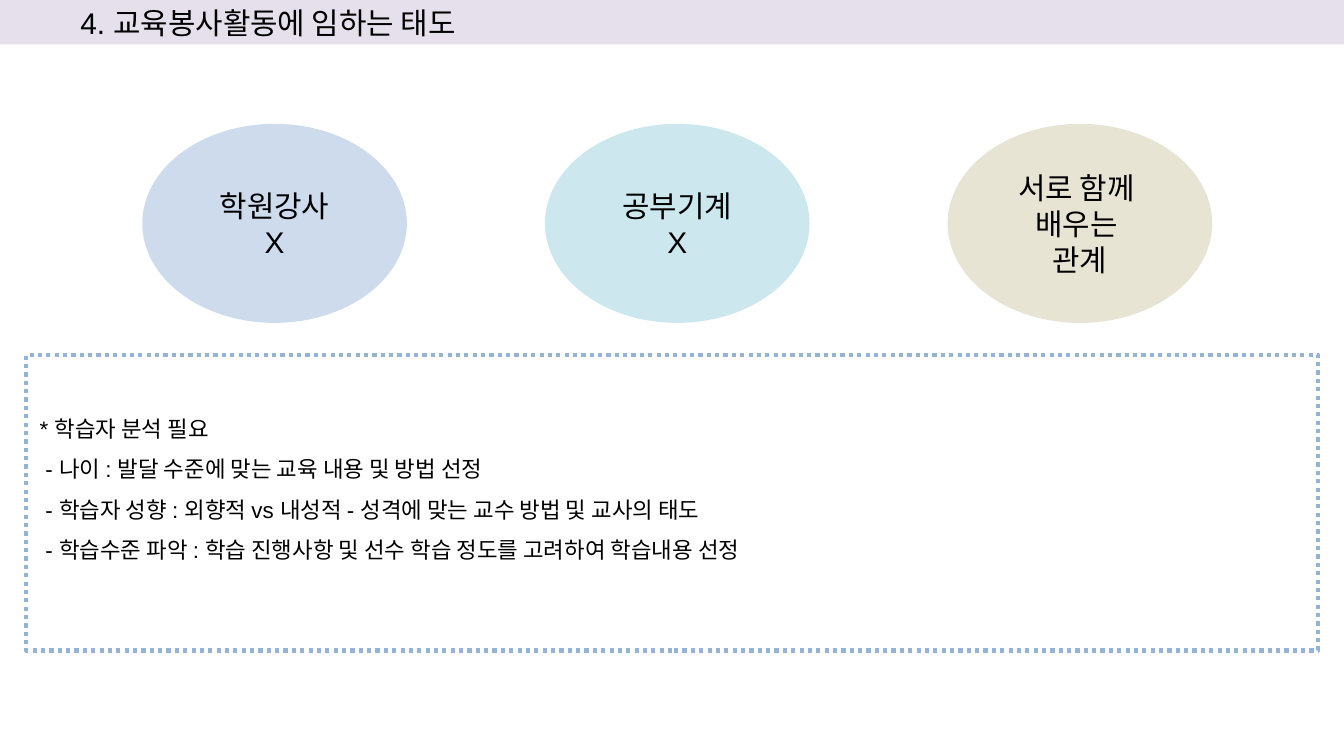
from dataclasses import dataclass

from lxml import etree
from pptx import Presentation
from pptx.dml.color import RGBColor
from pptx.enum.dml import MSO_LINE
from pptx.enum.shapes import MSO_SHAPE
from pptx.enum.text import MSO_ANCHOR, PP_ALIGN
from pptx.oxml.ns import qn
from pptx.util import Cm, Pt

RECTANGLE, OVAL = MSO_SHAPE.RECTANGLE, MSO_SHAPE.OVAL
TOP, MIDDLE = MSO_ANCHOR.TOP, MSO_ANCHOR.MIDDLE
LEFT, CENTER, JUSTIFY = PP_ALIGN.LEFT, PP_ALIGN.CENTER, PP_ALIGN.JUSTIFY
DOTTED = MSO_LINE.ROUND_DOT
FONT = "Arial"
BLACK = "000000"
OVAL_LEFT, OVAL_STEP = 2.69, 7.61


@dataclass(frozen=True)
class Line:
    """A paragraph of text with its left indent in centimetres."""

    text: str
    indent: float = 0


@dataclass(frozen=True)
class Block:
    """A filled or outlined shape with text; lengths are in centimetres."""

    kind: int
    left: float
    top: float
    width: float
    height: float
    lines: tuple[Line, ...]
    size: int = 16
    align: int = CENTER
    anchor: int = MIDDLE
    spacing: float = 1.0
    inset: float = 0.13
    fill: str | None = None
    opacity: int = 100
    outline: str | None = None


@dataclass(frozen=True)
class Role:
    """A relationship named in one of the ovals."""

    lines: tuple[Line, ...]
    fill: str


HEADING = Block(RECTANGLE, 0, 0, 25.4, 0.84, (Line("4. 교육봉사활동에 임하는 태도", 1.27),),
                align=JUSTIFY, fill="E6E0EC")
ANALYSIS = Block(
    RECTANGLE, 0.5, 6.7, 24.41, 5.59,
    (
        Line("* 학습자 분석 필요"),
        Line("- 나이 : 발달 수준에 맞는 교육 내용 및 방법 선정", 0.11),
        Line("- 학습자 성향 : 외향적 vs 내성적 - 성격에 맞는 교수 방법 및 교사의 태도", 0.11),
        Line("- 학습수준 파악 : 학습 진행사항 및 선수 학습 정도를 고려하여 학습내용 선정", 0.11),
    ),
    size=12, align=LEFT, anchor=TOP, spacing=1.5, inset=0.89, outline="95B3D7",
)
ROLES = (
    Role((Line("학원강사\nX"),), "B9CDE5"),
    Role((Line("공부기계\nX"),), "B7DEE8"),
    Role((Line("서로 함께 "), Line("배우는 "), Line("관계")), "DDD9C3"),
)


def color(value: str) -> RGBColor:
    """Turn a hex string into a colour."""
    return RGBColor.from_string(value)


def paint(shape, block: Block) -> None:
    """Set the fill, opacity and outline of a shape."""
    shape.shadow.inherit = False
    if block.fill:
        shape.fill.solid()
        shape.fill.fore_color.rgb = color(block.fill)
        if block.opacity < 100:
            tone = shape.fill._xPr.find(".//" + qn("a:srgbClr"))
            etree.SubElement(tone, qn("a:alpha")).set("val", str(block.opacity * 1000))
    else:
        shape.fill.background()
    if block.outline:
        shape.line.color.rgb = color(block.outline)
        shape.line.width = Pt(2.25)
        shape.line.dash_style = DOTTED
    else:
        shape.line.fill.background()


def write_line(paragraph, line: Line, block: Block) -> None:
    """Write one paragraph, with a line break between its spans."""
    paragraph.alignment = block.align
    paragraph.line_spacing = block.spacing
    if line.indent:
        properties = paragraph._p.get_or_add_pPr()
        properties.set("marL", str(Cm(line.indent)))
        properties.set("indent", "0")
    for index, text in enumerate(line.text.split("\n")):
        if index:
            paragraph.add_line_break()
        span = paragraph.add_run()
        span.text = text
        span.font.name = FONT
        span.font.size = Pt(block.size)
        span.font.color.rgb = color(BLACK)


def draw_block(page, block: Block) -> None:
    """Draw a shape and its text."""
    shape = page.shapes.add_shape(block.kind, Cm(block.left), Cm(block.top),
                                  Cm(block.width), Cm(block.height))
    paint(shape, block)
    box = shape.text_frame
    box.word_wrap = True
    box.vertical_anchor = block.anchor
    box.margin_top = Cm(block.inset)
    for index, line in enumerate(block.lines):
        paragraph = box.add_paragraph() if index else box.paragraphs[0]
        write_line(paragraph, line, block)


def main() -> None:
    """Build the slide and save it."""
    deck = Presentation()
    deck.slide_width, deck.slide_height = Cm(25.4), Cm(14.28)
    page = deck.slides.add_slide(deck.slide_layouts[6])
    draw_block(page, HEADING)
    draw_block(page, ANALYSIS)
    for index, role in enumerate(ROLES):
        draw_block(page, Block(OVAL, OVAL_LEFT + index * OVAL_STEP, 2.34, 5, 3.76,
                               role.lines, fill=role.fill, opacity=70))
    deck.save("out.pptx")


if __name__ == "__main__":
    main()
